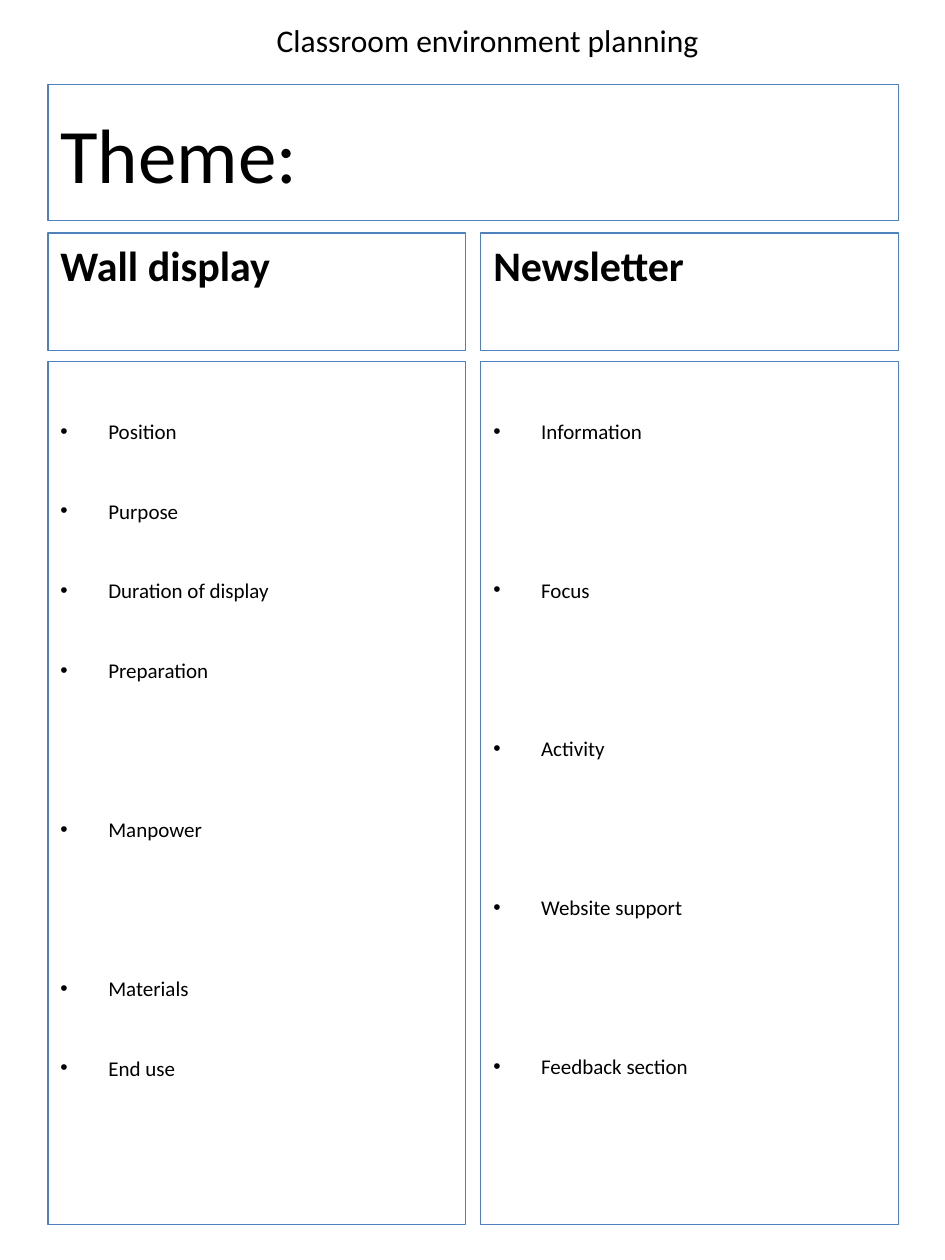
from pptx import Presentation
from pptx.dml.color import RGBColor
from pptx.enum.text import MSO_ANCHOR, MSO_AUTO_SIZE, PP_ALIGN
from pptx.util import Inches, Pt

TOP, MIDDLE = MSO_ANCHOR.TOP, MSO_ANCHOR.MIDDLE
NO_FIT, GROW = MSO_AUTO_SIZE.NONE, MSO_AUTO_SIZE.SHAPE_TO_FIT_TEXT
LEFT, CENTER = PP_ALIGN.LEFT, PP_ALIGN.CENTER

HEADER = "Classroom environment planning"
THEME = "Theme:"
COLUMNS = [
    ("Wall display", ["Position", "Purpose", "Duration of display", "Preparation",
                      "Manpower", "Materials", "End use"]),
    ("Newsletter", ["Information", "Focus", "Activity", "Website support",
                    "Feedback section"]),
]
ROOMY = {"Manpower", "Materials", "Focus", "Activity", "Website support",
         "Feedback section"}
COLORS = {"text": "000000", "border": "4F81BD"}
FONT = "Calibri"

MARGIN, WIDTH, GUTTER = 0.38, 6.75, 0.12
COLUMN_WIDTH = (WIDTH - GUTTER) / 2
HEADING_TOP, HEADING_HEIGHT = 1.85, 0.93
LIST_TOP, LIST_HEIGHT = 2.87, 6.85
INDENT = Inches(0.38)
ROOMY_SPACE = Pt(47.5)


def place(sp, left, top, width, height):
    sp.left, sp.top = Inches(left), Inches(top)
    sp.width, sp.height = Inches(width), Inches(height)
    sp.line.color.rgb = RGBColor.from_string(COLORS["border"])
    sp.line.width = Pt(0.75)


def write(sp, lines, size, bold=False, align=LEFT, anchor=TOP, fit=NO_FIT):
    tf = sp.text_frame
    tf.text = "\n".join(lines)
    tf.word_wrap = True
    tf.auto_size = fit
    tf.vertical_anchor = anchor
    for p in tf.paragraphs:
        p.alignment = align
        p.font.name = FONT
        p.font.size = Pt(size)
        p.font.bold = bold
        p.font.color.rgb = RGBColor.from_string(COLORS["text"])


def space_list(sp):
    for p in sp.text_frame.paragraphs:
        p.line_spacing = 3.0
        if p.text in ROOMY:
            p.space_before = ROOMY_SPACE
        pPr = p._p.get_or_add_pPr()
        pPr.set("marL", str(INDENT))
        pPr.set("indent", str(-INDENT))


prs = Presentation()
prs.slide_width, prs.slide_height = Inches(7.5), Inches(10)
s = prs.slides.add_slide(prs.slide_layouts.get_by_name("Comparison"))

title = s.shapes.title
place(title, MARGIN, 0.67, WIDTH, 1.08)
write(title, [THEME], 44, anchor=MIDDLE)

for i, (heading, items) in enumerate(COLUMNS):
    left = MARGIN + i * (COLUMN_WIDTH + GUTTER)
    heading_box = s.placeholders[2 * i + 1]
    place(heading_box, left, HEADING_TOP, COLUMN_WIDTH, HEADING_HEIGHT)
    write(heading_box, [heading], 24, bold=True)
    list_box = s.placeholders[2 * i + 2]
    place(list_box, left, LIST_TOP, COLUMN_WIDTH, LIST_HEIGHT)
    write(list_box, items, 12)
    space_list(list_box)

header = s.shapes.add_textbox(Inches(0.68), Inches(0.12), Inches(6.38), Inches(0.4))
write(header, [HEADER], 18, align=CENTER, fit=GROW)

prs.save("out.pptx")
